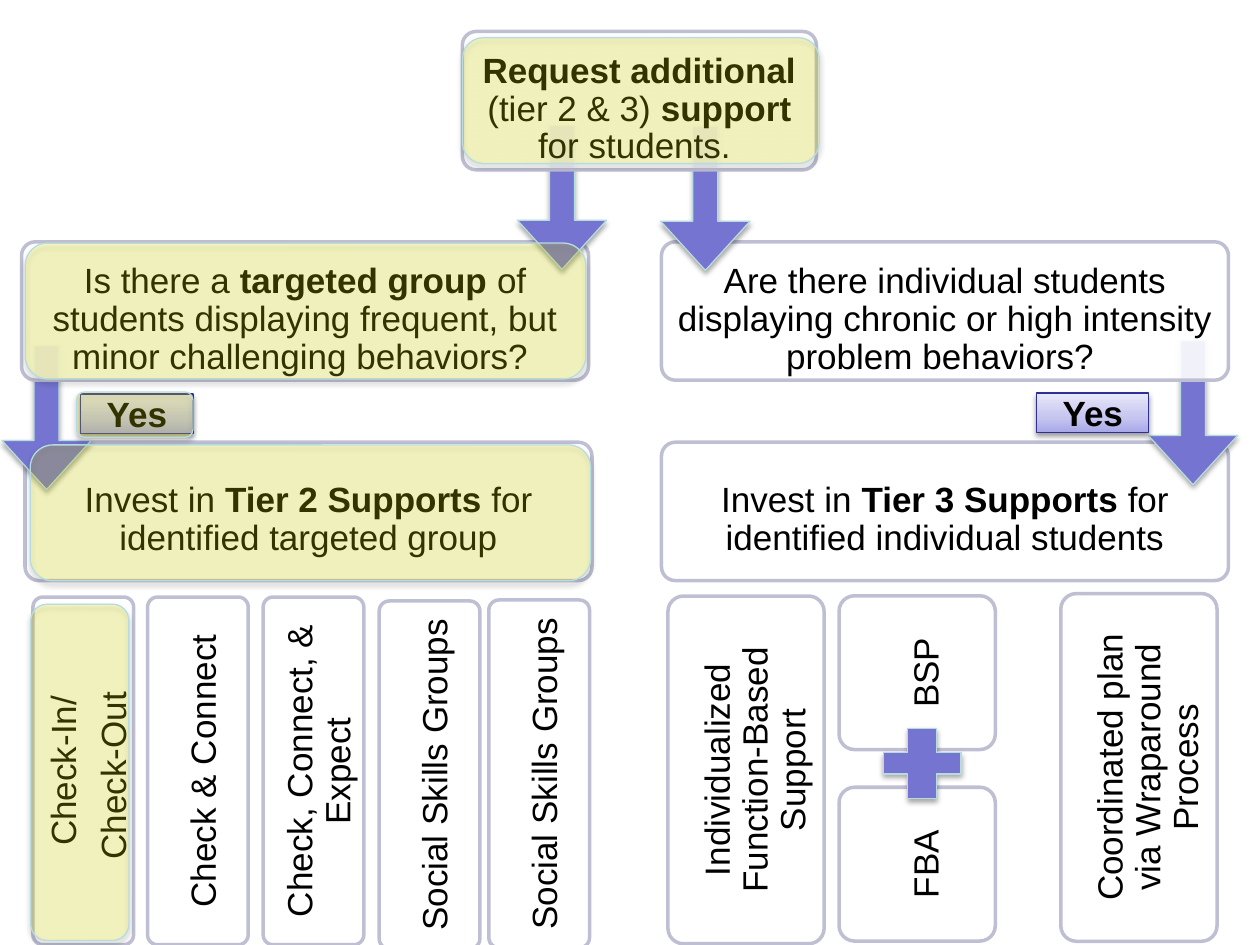
from lxml import etree
from pptx import Presentation
from pptx.dml.color import RGBColor
from pptx.enum.shapes import MSO_SHAPE
from pptx.enum.text import MSO_ANCHOR, PP_ALIGN
from pptx.oxml import parse_xml
from pptx.oxml.ns import nsdecls, qn
from pptx.util import Cm, Pt

ROUND = MSO_SHAPE.ROUNDED_RECTANGLE
RECT = MSO_SHAPE.RECTANGLE
ARROW = MSO_SHAPE.LEFT_ARROW
PLUS = MSO_SHAPE.CROSS
MIDDLE = MSO_ANCHOR.MIDDLE
CENTER = PP_ALIGN.CENTER

COLORS = {
    "card": "FFFFFF", "edge": "BFBFD4", "arrow": "7575D1", "rim": "B6DCDF",
    "mark": "FFFF00", "tag": "2F2F98", "text": "000000", "shade": "000000",
}
FADE = ((0, "A9A9E9"), (35, "C4C4EF"), (100, "E8E8FA"))
FONT = "Arial"
UP = 270


def rgb(name):
    return RGBColor.from_string(COLORS[name])


def frame(x, y, w, h):
    return Cm(x - w / 2), Cm(y - h / 2), Cm(w), Cm(h)


def add_form(shapes, kind, box, edge, width, turn=0, adj=()):
    form = shapes.add_shape(kind, *frame(*box))
    form.rotation = turn
    form.shadow.inherit = False
    form.line.color.rgb = rgb(edge)
    form.line.width = Pt(width)
    for i, value in enumerate(adj):
        form.adjustments[i] = value
    return form


def paint(form, name, alpha=100):
    form.fill.solid()
    form.fill.fore_color.rgb = rgb(name)
    if alpha < 100:
        color = form.element.spPr.find(qn("a:solidFill"))[0]
        etree.SubElement(color, qn("a:alpha"), val=str(alpha * 1000))


def fade(form):
    form.fill.background()
    stops = "".join(
        f'<a:gs pos="{pos * 1000}"><a:srgbClr val="{color}"/></a:gs>'
        for pos, color in FADE
    )
    grad = parse_xml(
        f'<a:gradFill {nsdecls("a")}><a:gsLst>{stops}</a:gsLst>'
        '<a:lin ang="16200000" scaled="0"/></a:gradFill>'
    )
    props = form.element.spPr
    props.replace(props.find(qn("a:noFill")), grad)


def shade(form, alpha=35):
    form.element.spPr.find(qn("a:effectLst")).append(parse_xml(
        f'<a:outerShdw {nsdecls("a")} blurRad="39400" dist="22900" '
        'dir="5400000" rotWithShape="0">'
        f'<a:srgbClr val="{COLORS["shade"]}"><a:alpha val="{alpha * 1000}"/>'
        '</a:srgbClr></a:outerShdw>'
    ))


def write(text, lines):
    text.word_wrap = True
    text.vertical_anchor = MIDDLE
    for i, runs in enumerate(lines):
        para = text.paragraphs[0] if i == 0 else text.add_paragraph()
        para.alignment = CENTER
        para.line_spacing = 0.9
        para.space_after = Pt(7)
        for words, bold in runs:
            run = para.add_run()
            run.text = words
            run.font.name = FONT
            run.font.size = Pt(20)
            run.font.bold = bold
            run.font.color.rgb = rgb("text")


def add_card(slide, box, lines, turn=0):
    group = slide.shapes.add_group_shape()
    form = add_form(group.shapes, ROUND, box, "edge", 2, turn, [0.1])
    paint(form, "card", 90)
    x, y, w, h = box
    shift = 0.065 * h
    x, y = (x + shift, y) if turn else (x, y + shift)
    label = group.shapes.add_textbox(*frame(x, y, w - 0.2, h * 0.94))
    label.rotation = turn
    text = label.text_frame
    text.margin_left = text.margin_right = Cm(0.2)
    text.margin_top = text.margin_bottom = Cm(0.2)
    write(text, lines)


def add_arrow(slide, x, y):
    form = add_form(slide.shapes, ARROW, (x, y, 2.9, 1.8), "rim", 0.75, UP,
                    [0.28, 0.55])
    paint(form, "arrow")
    shade(form)


def add_plus(slide, box):
    form = add_form(slide.shapes, PLUS, box, "rim", 0.75, adj=[0.35])
    paint(form, "arrow")
    shade(form)


def add_mark(slide, box, turn=0):
    form = add_form(slide.shapes, ROUND, box, "rim", 0.75, turn)
    paint(form, "mark", 20)
    shade(form)


def add_tag(slide, x, y):
    form = add_form(slide.shapes, RECT, (x, y, 2.26, 0.79), "tag", 0.75)
    fade(form)
    shade(form, 38)
    write(form.text_frame, [[("Yes", True)]])
    para = form.text_frame.paragraphs[0]
    para.line_spacing = 1.0
    para.space_after = Pt(0)


def main():
    deck = Presentation()
    deck.slide_width, deck.slide_height = Cm(25.4), Cm(19.05)
    slide = deck.slides.add_slide(deck.slide_layouts[6])

    steps = [
        (6.22, 10.31, [("Invest in ", False), ("Tier 2 Supports", True),
                       (" for identified targeted group", False)]),
        (19.05, 10.31, [("Invest in ", False), ("Tier 3 Supports", True),
                        (" for identified individual students", False)]),
    ]
    asks = [
        (6.15, 6.27, [("Is there a ", False), ("targeted group ", True),
                      ("of students displaying frequent, but minor "
                       "challenging behaviors? ", False)]),
        (19.05, 6.27, [("Are there individual students displaying chronic "
                        "or high intensity problem behaviors? ", False)]),
    ]
    for x, y, runs in steps:
        add_card(slide, (x, y, 11.43, 2.79), [runs])
    for x, y in ((0.94, 8.42), (24.05, 8.32)):
        add_arrow(slide, x, y)
    for x, y, runs in asks:
        add_card(slide, (x, y, 11.43, 2.79), [runs])

    plans = [
        (1.68, 15.54, 7.01, 2.03, ["Check-In/", "Check-Out "]),
        (3.99, 15.54, 7.01, 2.03, ["Check & Connect"]),
        (6.32, 15.54, 7.01, 2.03, ["Check, Connect, & Expect"]),
        (8.66, 15.62, 7.01, 2.03, ["Social Skills Groups"]),
        (10.87, 15.6, 7.01, 2.03, ["Social Skills Groups"]),
        (15.04, 15.52, 7.01, 3.15, ["Individualized Function-Based Support"]),
        (22.96, 15.47, 7.01, 3.15, ["Coordinated plan via Wraparound Process"]),
        (18.49, 17.42, 3.1, 3.15, ["FBA"]),
        (18.49, 13.56, 3.1, 3.15, ["BSP"]),
    ]
    for *box, lines in plans:
        add_card(slide, box, [[(line, False)] for line in lines], UP)

    add_plus(slide, (18.59, 15.39, 1.57, 1.42))
    for x, y in ((11.33, 3.98), (14.22, 4)):
        add_arrow(slide, x, y)
    add_card(slide, (12.89, 2.03, 7.14, 2.79), [[
        ("Request additional ", True), ("(tier 2 & 3) ", False),
        ("support", True), (" for students. ", False)]])

    add_mark(slide, (6.16, 6.27, 11.3, 2.74))
    add_mark(slide, (6.26, 10.34, 11.3, 2.74))
    add_mark(slide, (12.92, 2.03, 7.19, 2.54))
    add_mark(slide, (1.61, 15.57, 6.78, 1.98), UP)
    for x, y in ((2.76, 8.34), (22.03, 8.32)):
        add_tag(slide, x, y)
    add_mark(slide, (2.72, 8.36, 2.34, 0.91))

    deck.save("out.pptx")


if __name__ == "__main__":
    main()
